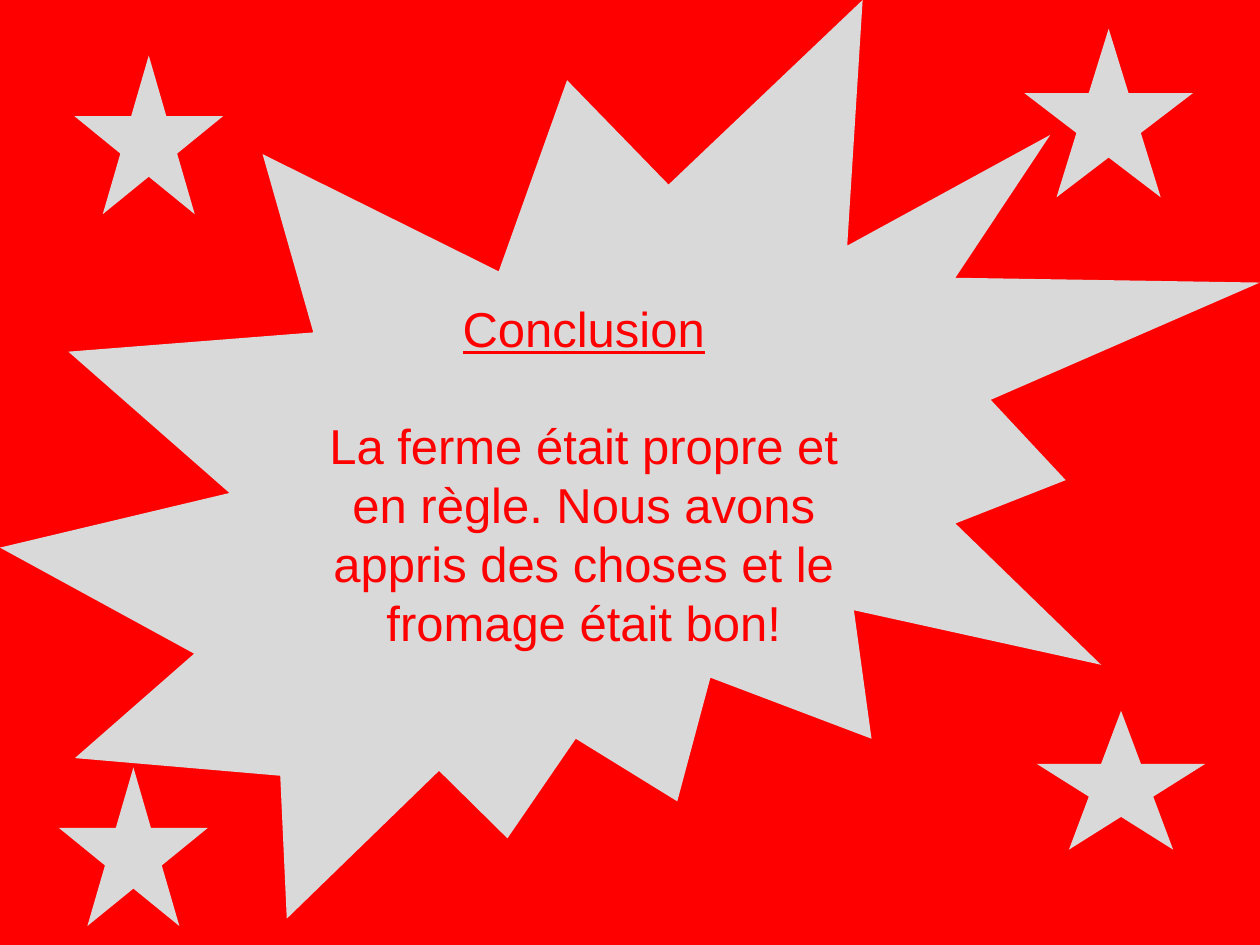
from pptx import Presentation
from pptx.dml.color import RGBColor
from pptx.enum.shapes import MSO_SHAPE
from pptx.enum.text import MSO_ANCHOR, PP_ALIGN
from pptx.util import Cm, Pt

RECTANGLE = MSO_SHAPE.RECTANGLE
BURST = MSO_SHAPE.EXPLOSION2
STAR = MSO_SHAPE.STAR_5_POINT
MIDDLE = MSO_ANCHOR.MIDDLE
CENTER = PP_ALIGN.CENTER

RED = "FF0000"
GREY = "D9D9D9"
SLIDE_WIDTH, SLIDE_HEIGHT = 25.4, 19.05
BURST_HEIGHT = 18.52
TEXT_SIZE = 28
LINE_GAP = 33.6  # one empty line between heading and closing words

HEADING = "Conclusion"
CLOSING = ("La ferme était propre et en règle. Nous avons appris "
           "des choses et le fromage était bon!")

# left, top, width, height in cm
STAR_BOXES = [
    (1.5, 1.12, 3, 3.2),
    (20.65, 0.58, 3.4, 3.4),
    (20.9, 14.33, 3.4, 2.8),
    (1.19, 15.47, 3, 3.2),
]


def color(hex_string):
    return RGBColor.from_string(hex_string)


def add_plain_shape(slide, kind, box, fill):
    shape = slide.shapes.add_shape(kind, *(Cm(length) for length in box))
    shape.shadow.inherit = False
    shape.fill.solid()
    shape.fill.fore_color.rgb = color(fill)
    shape.line.fill.background()
    return shape


def add_conclusion(slide, box):
    burst = add_plain_shape(slide, BURST, box, GREY)
    frame = burst.text_frame
    frame.word_wrap = True
    frame.vertical_anchor = MIDDLE
    frame.text = f"{HEADING}\n{CLOSING}"
    heading, closing = frame.paragraphs
    for paragraph in (heading, closing):
        paragraph.alignment = CENTER
        for run in paragraph.runs:
            run.font.name = "Arial"
            run.font.size = Pt(TEXT_SIZE)
            run.font.color.rgb = color(RED)
            run.font.underline = paragraph is heading
    closing.space_before = Pt(LINE_GAP)


def main():
    prs = Presentation()
    prs.slide_width, prs.slide_height = Cm(SLIDE_WIDTH), Cm(SLIDE_HEIGHT)
    slide = prs.slides.add_slide(prs.slide_layouts[6])

    # Red backdrop
    add_plain_shape(slide, RECTANGLE, (0, 0, SLIDE_WIDTH, SLIDE_HEIGHT), RED)

    # Burst with the conclusion
    add_conclusion(slide, (0, 0, SLIDE_WIDTH, BURST_HEIGHT))

    # Corner stars
    for box in STAR_BOXES:
        add_plain_shape(slide, STAR, box, GREY)

    prs.save("out.pptx")


if __name__ == "__main__":
    main()
